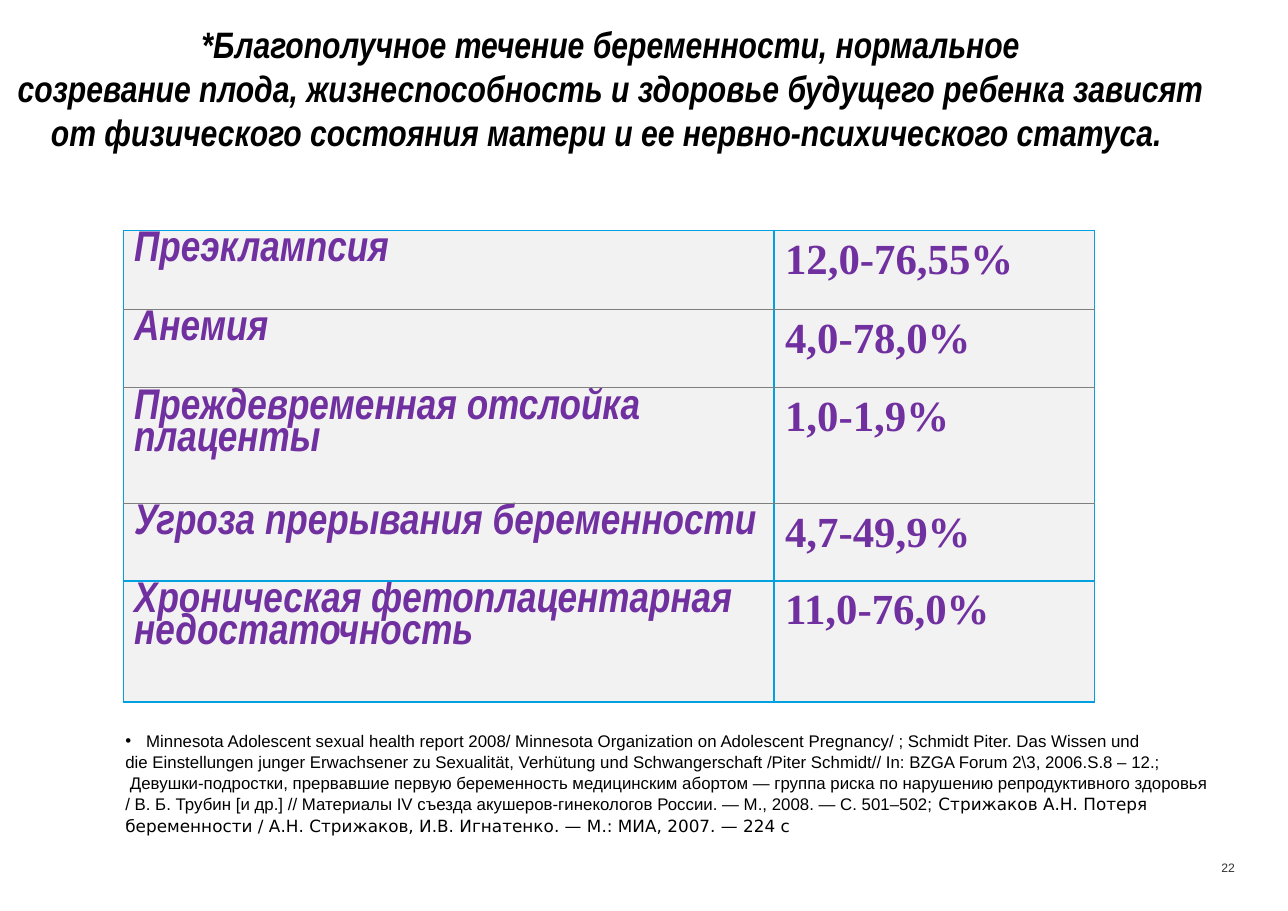
from dataclasses import dataclass

from lxml.etree import SubElement
from pptx import Presentation
from pptx.dml.color import RGBColor
from pptx.enum.text import MSO_ANCHOR as Anchor, PP_ALIGN as Align
from pptx.oxml.ns import qn
from pptx.slide import Slide
from pptx.table import _Cell as Cell
from pptx.text.text import Font, TextFrame
from pptx.util import Cm, Pt

COLORS = {
    "black": "000000",
    "number": "313131",
    "purple": "7030A0",
    "cell": "F2F2F2",
    "border": "00A1DE",
    "divider": "7F7F7F",
}


@dataclass(frozen=True)
class Complication:
    name: str
    frequency: str
    height: float


COMPLICATIONS = [
    Complication("Преэклампсия", "12,0-76,55%", 1.83),
    Complication("Анемия", "4,0-78,0%", 1.8),
    Complication("Преждевременная отслойка плаценты", "1,0-1,9%", 2.67),
    Complication("Угроза прерывания беременности", "4,7-49,9%", 1.78),
    Complication("Хроническая фетоплацентарная недостаточность", "11,0-76,0%", 2.79),
]
COLUMN_WIDTHS = (15.01, 7.39)

STATEMENT = [
    "*Благополучное течение беременности, нормальное",
    "созревание плода, жизнеспособность и здоровье будущего ребенка зависят "
    "от физического состояния матери и ее нервно-психического статуса. ",
]

# Each line of the references is a list of (text, font name) runs.
REFERENCES = [
    [("Minnesota Adolescent sexual health report 2008/ Minnesota Organization on "
      "Adolescent Pregnancy/ ; Schmidt Piter. Das Wissen und", "Arial")],
    [("die Einstellungen junger Erwachsener zu Sexualität, Verhütung und Schwangerschaft "
      "/Piter Schmidt// In: BZGA Forum 2\\3, 2006.S.8 – 12.;", "Arial")],
    [(" Девушки-подростки, прервавшие первую беременность медицинским абортом — "
      "группа риска по нарушению репродуктивного здоровья", "Arial")],
    [("/ В. Б. Трубин [и др.] // Материалы IV съезда акушеров-гинекологов России. "
      "— М., 2008. — С. 501–502; ", "Arial"),
     ("Стрижаков А.Н. Потеря", "DejaVu Sans")],
    [("беременности / А.Н. Стрижаков, И.В. Игнатенко. — М.: МИА, 2007. — 224 с",
      "DejaVu Sans")],
]


def set_font(font: Font, name: str, size: float, color: str,
             bold: bool = False, italic: bool = False) -> None:
    font.name, font.size = name, Pt(size)
    font.bold, font.italic = bold, italic
    font.color.rgb = RGBColor.from_string(COLORS[color])


def add_text_frame(slide: Slide, left: float, top: float, width: float,
                   height: float, inset: bool = True) -> TextFrame:
    box = slide.shapes.add_textbox(Cm(left), Cm(top), Cm(width), Cm(height))
    frame = box.text_frame
    frame.word_wrap = True
    if not inset:
        frame.margin_left = frame.margin_top = 0
        frame.margin_right = frame.margin_bottom = 0
    return frame


def set_border(cell: Cell, side: str, color: str, width: float) -> None:
    """Draw one side of a cell: L, R, T or B."""
    properties = cell._tc.get_or_add_tcPr()
    line = SubElement(properties, qn(f"a:ln{side}"), w=str(Pt(width)))
    fill = SubElement(line, qn("a:solidFill"))
    SubElement(fill, qn("a:srgbClr"), val=COLORS[color])


def fill_cell(cell: Cell, text: str, is_name: bool, row: int) -> None:
    last = len(COMPLICATIONS) - 1
    for side in "LR":
        set_border(cell, side, "border", 1)
    for side, edge in (("T", row), ("B", row + 1)):
        if 0 < edge < last:
            set_border(cell, side, "divider", 0.75)
        else:
            set_border(cell, side, "border", 1)
    cell.fill.solid()
    cell.fill.fore_color.rgb = RGBColor.from_string(COLORS["cell"])
    cell.text = text
    paragraph = cell.text_frame.paragraphs[0]
    paragraph.line_spacing = 0.8 if is_name else 1.0
    set_font(paragraph.font, "Arial Narrow" if is_name else "Times New Roman",
             28, "purple", bold=True, italic=is_name)


def add_statement(slide: Slide) -> None:
    frame = add_text_frame(slide, 0.25, 0.51, 27.66, 3.2, inset=False)
    frame.text = "\n".join(STATEMENT)
    for paragraph in frame.paragraphs:
        paragraph.alignment = Align.CENTER
        set_font(paragraph.font, "Arial Narrow", 24, "black", bold=True, italic=True)


def add_complications(slide: Slide) -> None:
    height = sum(item.height for item in COMPLICATIONS)
    table = slide.shapes.add_table(
        len(COMPLICATIONS), len(COLUMN_WIDTHS), Cm(2.84), Cm(5.31),
        Cm(sum(COLUMN_WIDTHS)), Cm(height)).table
    table.first_row = table.horz_banding = False
    for column, width in zip(table.columns, COLUMN_WIDTHS):
        column.width = Cm(width)
    for row, item in enumerate(COMPLICATIONS):
        table.rows[row].height = Cm(item.height)
        fill_cell(table.cell(row, 0), item.name, True, row)
        fill_cell(table.cell(row, 1), item.frequency, False, row)


def add_references(slide: Slide) -> None:
    frame = add_text_frame(slide, 2.64, 16.69, 25.86, 3.56)
    for index, runs in enumerate(REFERENCES):
        paragraph = frame.paragraphs[0] if index == 0 else frame.add_paragraph()
        paragraph.line_spacing = 1.05
        if index == 0:
            properties = paragraph._p.get_or_add_pPr()
            properties.set("marL", str(Cm(0.48)))
            properties.set("indent", str(-Cm(0.48)))
            SubElement(properties, qn("a:buFont"), typeface="Arial")
            SubElement(properties, qn("a:buChar"), char="•")
        for text, font_name in runs:
            run = paragraph.add_run()
            run.text = text
            set_font(run.font, font_name, 11, "black")


def add_slide_number(slide: Slide) -> None:
    frame = add_text_frame(slide, 25.91, 19.61, 2.57, 0.76, inset=False)
    frame.vertical_anchor = Anchor.MIDDLE
    frame.text = "22"
    paragraph = frame.paragraphs[0]
    paragraph.alignment = Align.RIGHT
    set_font(paragraph.font, "Arial", 8, "number")


def main() -> None:
    presentation = Presentation()
    presentation.slide_width, presentation.slide_height = Cm(29.7), Cm(21)
    slide = presentation.slides.add_slide(presentation.slide_layouts[6])
    add_slide_number(slide)
    add_statement(slide)
    add_complications(slide)
    add_references(slide)
    presentation.save("out.pptx")


if __name__ == "__main__":
    main()
